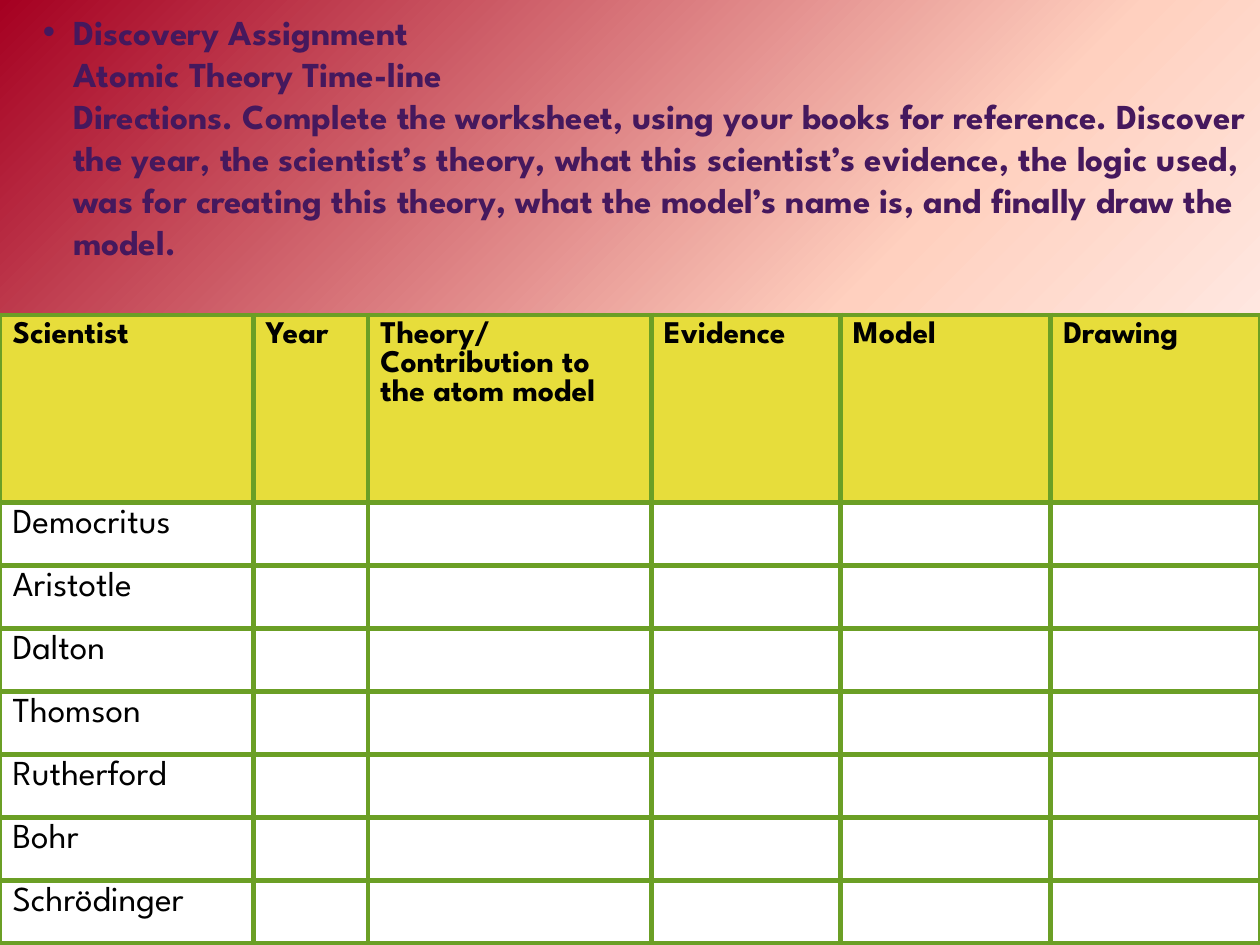
import copy

import pptx
import pptx.dml.color
import pptx.enum.text
import pptx.oxml
import pptx.oxml.ns
import pptx.util
from pptx.util import Inches

FONT = "League Spartan"
COLORS = {
    "red": "A50021",
    "peach": "FFD0BF",
    "blush": "FFE7E0",
    "purple": "45185D",
    "yellow": "E7DD3B",
    "green": "6B9F25",
    "black": "000000",
}
TITLE = (
    "Discovery Assignment\vAtomic Theory Time-line\v"
    "Directions. Complete the worksheet, using your books for reference. "
    "Discover the year, the scientist’s theory, what this scientist’s evidence, "
    "the logic used, was for creating this theory, what the model’s name is, "
    "and finally draw the model."
)
HEADERS = ["Scientist", "Year", "Theory/ Contribution to the atom model",
           "Evidence", "Model", "Drawing"]
SCIENTISTS = ["Democritus", "Aristotle", "Dalton", "Thomson", "Rutherford",
              "Bohr", "Schrödinger"]
COL_WIDTHS = [2.01, 0.91, 2.25, 1.5, 1.67, 1.66]
HEADER_HEIGHT, ROW_HEIGHT = 1.49, 0.5


def rgb(name):
    return pptx.dml.color.RGBColor.from_string(COLORS[name])


def xml(body):
    tag, rest = body[1:].split(" ", 1)
    return pptx.oxml.parse_xml(f"<{tag} {pptx.oxml.ns.nsdecls('a')} {rest}")


def write(tf, text, size=20, color="black", bold=False):
    tf.text = text
    p = tf.paragraphs[0]
    p.alignment = pptx.enum.text.PP_ALIGN.LEFT
    for r in p.runs:
        r.font.name = FONT
        r.font.size = pptx.util.Pt(size)
        r.font.bold = bold
        r.font.color.rgb = rgb(color)
    return p


def fill_gradient(sp, stops):
    sp.fill.gradient()
    sp.fill.gradient_angle = 315
    gs_list = sp._element.spPr.find(".//" + pptx.oxml.ns.qn("a:gsLst"))
    gs_list.append(copy.deepcopy(gs_list[-1]))
    for gs, (position, color) in zip(sp.fill.gradient_stops, stops):
        gs.position = position
        gs.color.rgb = rgb(color)


def add_bullet(p, color):
    pPr = p._p.get_or_add_pPr()
    pPr.set("marL", str(Inches(0.48)))
    pPr.set("indent", str(Inches(-0.24)))
    pPr.append(xml(f'<a:buClr ><a:srgbClr val="{COLORS[color]}"/></a:buClr>'))
    pPr.append(xml('<a:buFont typeface="Arial"/>'))
    pPr.append(xml('<a:buChar char="•"/>'))


def add_title(s):
    sp = s.shapes.title
    sp.left, sp.top, sp.width, sp.height = 0, 0, Inches(10), Inches(2.5)
    fill_gradient(sp, [(0, "red"), (0.73, "peach"), (1, "blush")])
    tf = sp.text_frame
    tf.word_wrap = True
    tf.auto_size = pptx.enum.text.MSO_AUTO_SIZE.NONE
    tf.vertical_anchor = pptx.enum.text.MSO_ANCHOR.MIDDLE
    tf.margin_bottom = Inches(0.38)
    p = write(tf, TITLE, color="purple", bold=True)
    add_bullet(p, "purple")


def set_borders(cell, color, width):
    tcPr = cell._tc.get_or_add_tcPr()
    for i, side in enumerate(("lnL", "lnR", "lnT", "lnB")):
        tcPr.insert(i, xml(
            f'<a:{side} w="{pptx.util.Pt(width)}"><a:solidFill>'
            f'<a:srgbClr val="{COLORS[color]}"/></a:solidFill></a:{side}>'))


def add_table(s):
    height = HEADER_HEIGHT + ROW_HEIGHT * len(SCIENTISTS)
    table = s.shapes.add_table(len(SCIENTISTS) + 1, len(HEADERS), 0, Inches(2.5),
                               Inches(10), Inches(height)).table
    for column, width in zip(table.columns, COL_WIDTHS):
        column.width = Inches(width)
    for i, row in enumerate(table.rows):
        row.height = Inches(ROW_HEIGHT if i else HEADER_HEIGHT)
    for cell in table.iter_cells():
        cell.fill.background()
        set_borders(cell, "green", 3)
    for i, text in enumerate(HEADERS):
        cell = table.cell(0, i)
        cell.fill.solid()
        cell.fill.fore_color.rgb = rgb("yellow")
        write(cell.text_frame, text, size=18, bold=True)
    for i, text in enumerate(SCIENTISTS, 1):
        write(table.cell(i, 0).text_frame, text)


def main():
    prs = pptx.Presentation()
    prs.slide_width, prs.slide_height = Inches(10), Inches(7.5)
    s = prs.slides.add_slide(prs.slide_layouts[5])
    add_title(s)
    add_table(s)
    prs.save("out.pptx")


if __name__ == "__main__":
    main()
